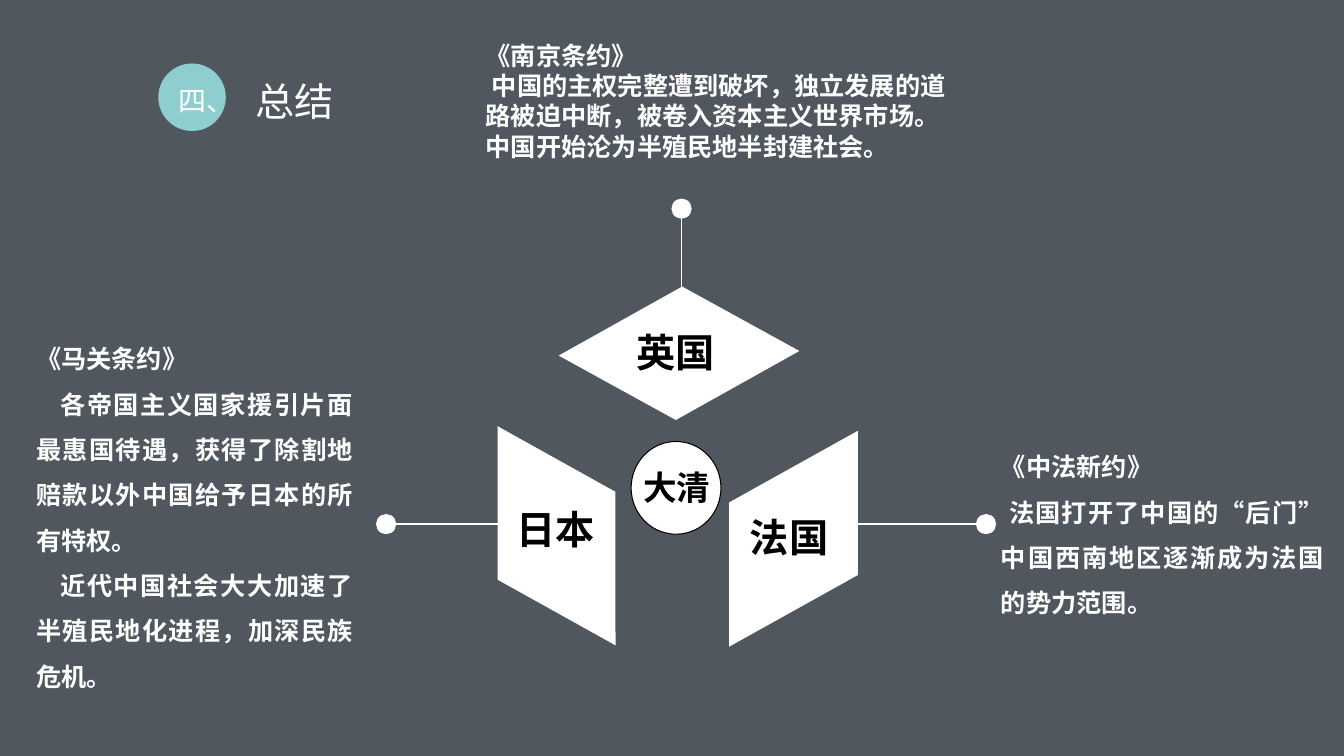
import pptx
import pptx.util
import pptx.dml.color
import pptx.enum.lang
import pptx.enum.shapes
import pptx.enum.text
import pptx.oxml.ns
from lxml import etree

RGBColor = pptx.dml.color.RGBColor
SHAPE = pptx.enum.shapes.MSO_SHAPE
ALIGN = pptx.enum.text.PP_ALIGN
qn = pptx.oxml.ns.qn

SLATE = RGBColor(0x50, 0x57, 0x5F)
TEAL = RGBColor(0x8F, 0xCE, 0xCE)
WHITE = RGBColor(0xFF, 0xFF, 0xFF)
BLACK = RGBColor(0x00, 0x00, 0x00)
CJK_FONT = "Noto Sans CJK SC"

# Grid of 160 columns by 90 rows with square cells
SLIDE_W, SLIDE_H = pptx.util.Inches(13.33), pptx.util.Inches(7.5)
CELL = SLIDE_H / 90
DOT = 2.4

HEADING = dict(name="Arial", size=28, bold=False, color=WHITE)
NUMBER = dict(name="Calibri", size=20, bold=False, color=WHITE)
COUNTRY = dict(name="Arial", size=28, bold=True, color=BLACK)
CENTRE = dict(COUNTRY, size=24)
BODY = dict(name=CJK_FONT, size=18, bold=True, color=WHITE)
TOP_BODY = dict(BODY, name="Arial")


def grid(*cells):
    return [round(c * CELL) for c in cells]


def format_run(r, style):
    values = dict(style, size=pptx.util.Pt(style["size"]),
                  language_id=pptx.enum.lang.MSO_LANGUAGE_ID.SIMPLIFIED_CHINESE)
    r.font.color.rgb = values.pop("color")
    for key, value in values.items():
        setattr(r.font, key, value)
    ea = etree.Element(qn("a:ea"), typeface=CJK_FONT)
    r.font._element.find(qn("a:latin")).addnext(ea)


def fill_text(sp, paragraphs, style, align=ALIGN.LEFT, spacing=1.0, wrap=True):
    """Write paragraphs, given as pairs of text and first-line indent in inches."""
    tf = sp.text_frame
    frame = dict(word_wrap=wrap, vertical_anchor=pptx.enum.text.MSO_ANCHOR.TOP,
                 auto_size=pptx.enum.text.MSO_AUTO_SIZE.NONE,
                 margin_top=pptx.util.Inches(0.05), margin_bottom=0)
    for key, value in frame.items():
        setattr(tf, key, value)
    for i, (text, indent) in enumerate(paragraphs):
        p = tf.add_paragraph() if i else tf.paragraphs[0]
        layout = dict(alignment=align, space_before=pptx.util.Pt(0),
                      line_spacing=pptx.util.Pt(round(style["size"] * 1.2 * spacing, 1)))
        for key, value in layout.items():
            setattr(p, key, value)
        if indent:
            p._p.get_or_add_pPr().set("indent", str(pptx.util.Inches(indent)))
        r = p.add_run()
        r.text = text
        format_run(r, style)


def add_text(s, box, paragraphs, style, **options):
    sp = s.shapes.add_textbox(*grid(*box))
    fill_text(sp, paragraphs, style, **options)


def add_figure(s, kind, box, fill=WHITE, line=None, rotation=0, adj=None, flip=False):
    sp = s.shapes.add_shape(kind, *grid(*box))
    sp.shadow.inherit = False
    sp.fill.solid()
    sp.fill.fore_color.rgb = fill
    if line is None:
        sp.line.fill.background()
    else:
        sp.line.color.rgb = line
        sp.line.width = pptx.util.Pt(0.75)
    sp.rotation = rotation
    if adj is not None:
        sp.adjustments[0] = adj
    if flip:
        sp._element.spPr.find(qn("a:xfrm")).set("flipH", "1")


def add_spoke(s, inner, outer):
    """A line from a face of the cube to a dot centred on its outer end."""
    line = s.shapes.add_connector(pptx.enum.shapes.MSO_CONNECTOR.STRAIGHT,
                                  *grid(*inner, *outer))
    line.line.color.rgb = WHITE
    line.line.width = pptx.util.Pt(1)
    etree.SubElement(line._element.spPr, qn("a:effectLst"))
    x, y = outer
    add_figure(s, SHAPE.OVAL, (x - DOT / 2, y - DOT / 2, DOT, DOT))


def add_title(s, box, text):
    sp = s.shapes.title
    sp.left, sp.top, sp.width, sp.height = grid(*box)
    fill_text(sp, [(text, 0)], HEADING)


def main():
    prs = pptx.Presentation()
    prs.slide_width, prs.slide_height = SLIDE_W, SLIDE_H
    s = prs.slides.add_slide(prs.slide_layouts[5])
    s.background.fill.solid()
    s.background.fill.fore_color.rgb = SLATE

    # Heading with its number
    add_figure(s, SHAPE.OVAL, (18.84, 7.56, 8.04, 8.04), TEAL)
    add_text(s, (20.04, 9.36, 9.12, 5.28), [("四、", 0)], NUMBER, wrap=False)
    add_title(s, (29.16, 8.64, 31.56, 6.84), "总结")

    # Spokes
    for inner, outer in (((81.12, 35.28), (81.12, 24.84)),
                         ((62.28, 62.4), (45.96, 62.4)),
                         ((101.04, 62.4), (117.36, 62.4))):
        add_spoke(s, inner, outer)

    # Cube faces around the centre
    for box, rotation, adj, flip in (
            ((68.4, 34.92, 24.84, 14.28), 28.8, 0.625, False),
            ((53.76, 55.8, 24.96, 15.96), 29.1, 0.558, True),
            ((81.48, 56.64, 25.92, 15), 330.9, 0.558, False)):
        add_figure(s, SHAPE.PARALLELOGRAM, box, rotation=rotation, adj=adj, flip=flip)
    add_figure(s, SHAPE.FLOWCHART_CONNECTOR, (75.12, 52.56, 10.68, 11.04), line=BLACK)

    # Labels
    for box, label, style in (((75.36, 54.96, 12.72, 6), "大清", CENTRE),
                              ((74.52, 38.52, 17.88, 6.84), "英国", COUNTRY),
                              ((88.08, 60.48, 12.72, 6.84), "法国", COUNTRY),
                              ((60.24, 59.52, 12.48, 6.84), "日本", COUNTRY)):
        add_text(s, box, [(label, 0)], style)

    # Treaties
    add_text(s, (56.64, 4.2, 58.32, 19.44), [
        ("《南京条约》", 0),
        ("中国的主权完整遭到破坏，独立发展的道路被迫中断，被卷入资本主义世界市场。", 0.06),
        ("中国开始沦为半殖民地半封建社会。", 0),
    ], TOP_BODY)
    add_text(s, (3.12, 38.52, 40.08, 44.04), [
        ("《马关条约》", 0),
        ("各帝国主义国家援引片面最惠国待遇，获得了除割地赔款以外中国给予日本的所有特权。", 0.24),
        ("近代中国社会大大加速了半殖民地化进程，加深民族危机。", 0.24),
    ], BODY, align=ALIGN.JUSTIFY, spacing=1.5)
    add_text(s, (117.96, 51.36, 40.8, 22.2), [
        ("《中法新约》", 0),
        ("法国打开了中国的“后门” 中国西南地区逐渐成为法国的势力范围。", 0.08),
    ], BODY, align=ALIGN.JUSTIFY, spacing=1.5)

    prs.save("out.pptx")


if __name__ == "__main__":
    main()
